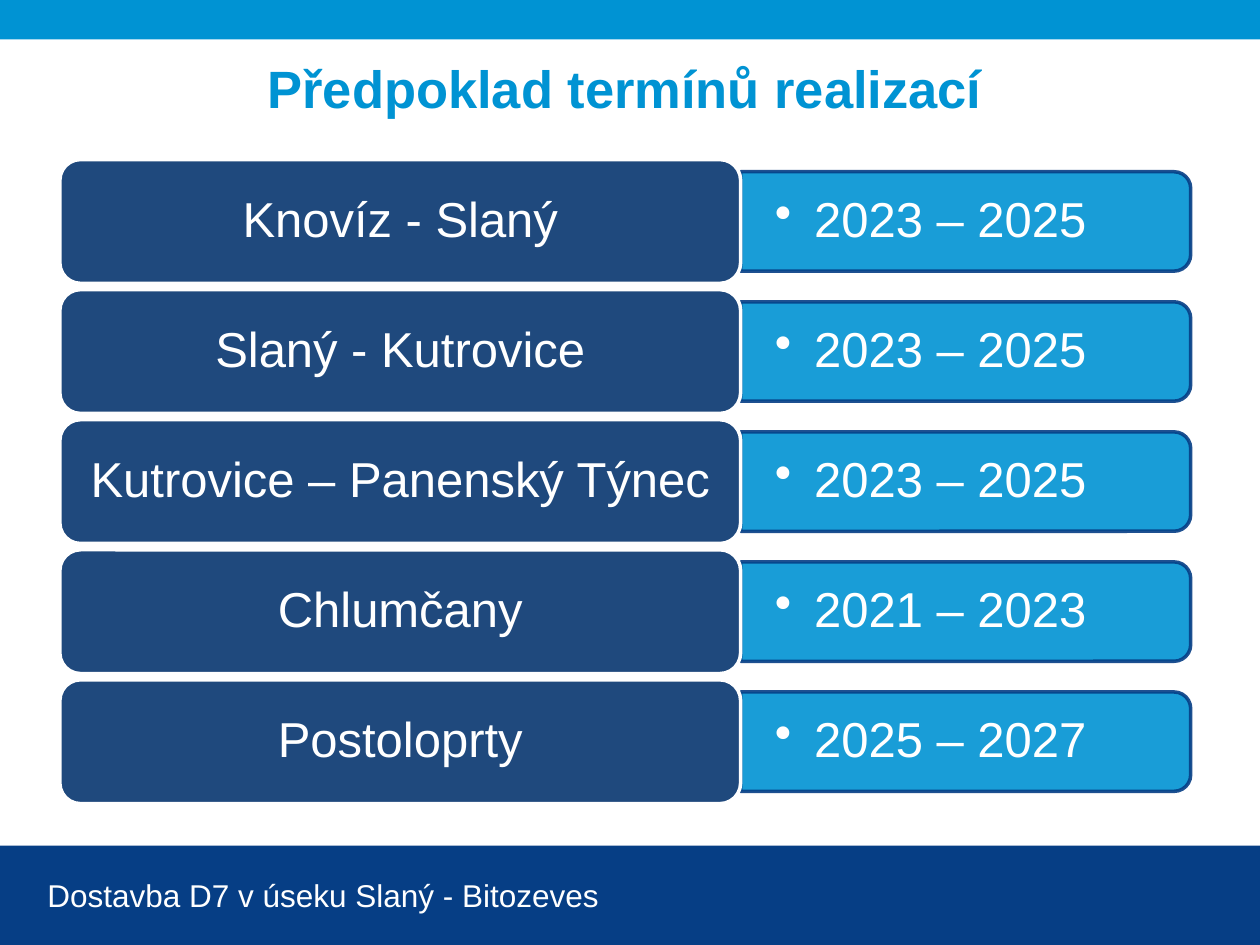
from dataclasses import dataclass

from lxml import etree
from pptx import Presentation
from pptx.dml.color import RGBColor
from pptx.enum.shapes import MSO_SHAPE
from pptx.enum.text import MSO_ANCHOR, PP_ALIGN
from pptx.oxml.ns import qn
from pptx.util import Pt

RECT = MSO_SHAPE.RECTANGLE
ROUNDED = MSO_SHAPE.ROUNDED_RECTANGLE
TOP_ROUNDED = MSO_SHAPE.ROUND_2_SAME_RECTANGLE
TOP, MIDDLE = MSO_ANCHOR.TOP, MSO_ANCHOR.MIDDLE
LEFT, CENTER = PP_ALIGN.LEFT, PP_ALIGN.CENTER


@dataclass(frozen=True)
class Theme:
    font: str = "Arial"
    sky: RGBColor = RGBColor(0x00, 0x93, 0xD3)
    navy: RGBColor = RGBColor(0x06, 0x3E, 0x85)
    steel: RGBColor = RGBColor(0x1F, 0x49, 0x7D)
    white: RGBColor = RGBColor(0xFF, 0xFF, 0xFF)
    title_size: int = 30
    row_size: int = 28
    footer_size: int = 18
    border: int = 2
    opacity: int = 90


THEME = Theme()
SLIDE_W, SLIDE_H = 720, 540
SECTIONS = [
    ("Knovíz - Slaný", "2023 – 2025"),
    ("Slaný - Kutrovice", "2023 – 2025"),
    ("Kutrovice – Panenský Týnec", "2023 – 2025"),
    ("Chlumčany", "2021 – 2023"),
    ("Postoloprty", "2025 – 2027"),
]


def add_block(slide, preset, box, fill, line=None):
    block = slide.shapes.add_shape(preset, *map(Pt, box))
    block.shadow.inherit = False
    block.fill.solid()
    block.fill.fore_color.rgb = fill
    if line is None:
        block.line.fill.background()
    else:
        block.line.color.rgb = line
        block.line.width = Pt(THEME.border)
    return block


def add_text_box(slide, box):
    return slide.shapes.add_textbox(*map(Pt, box))


def write(holder, text, size, color, align=LEFT, anchor=TOP, insets=(7.2, 3.6),
          bold=False, spacing=None, bullet_indent=None):
    """Write one paragraph; insets are (horizontal, vertical)."""
    frame = holder.text_frame
    frame.word_wrap = True
    frame.vertical_anchor = anchor
    frame.margin_left = frame.margin_right = Pt(insets[0])
    frame.margin_top = frame.margin_bottom = Pt(insets[1])
    paragraph = frame.paragraphs[0]
    paragraph.alignment = align
    if spacing:
        paragraph.line_spacing = spacing
    if bullet_indent:
        props = paragraph._p.get_or_add_pPr()
        props.set("marL", str(Pt(bullet_indent)))
        props.set("indent", str(-Pt(bullet_indent)))
        etree.SubElement(props, qn("a:buChar")).set("char", "•")
    run = paragraph.add_run()
    run.text = text
    run.font.name = THEME.font
    run.font.size = Pt(size)
    run.font.bold = bold
    run.font.color.rgb = color


def make_translucent(block):
    """Apply the theme opacity to the block's fill and line."""
    for color in block._element.spPr.iter(qn("a:srgbClr")):
        etree.SubElement(color, qn("a:alpha")).set("val", str(THEME.opacity * 1000))


def add_header(slide, box):
    left, top, width, height = box
    add_block(slide, RECT, (left, top, width, 22.5), THEME.sky)
    write(add_text_box(slide, (left + 46.8, top + 26, width - 99.4, height - 26)),
          "Předpoklad termínů realizací", THEME.title_size, THEME.sky,
          align=CENTER, insets=(7.2, 6), bold=True)


def add_footer(slide, box):
    left, top, _, _ = box
    add_block(slide, RECT, box, THEME.navy)
    write(add_text_box(slide, (left + 20, top + 14, 461.5, 29)),
          "Dostavba D7 v úseku Slaný - Bitozeves", THEME.footer_size, THEME.white)


def add_years(slide, box, years):
    """Bar with its right-hand corners rounded, made by a quarter turn."""
    left, top, width, height = box
    shift = (width - height) / 2
    bar = add_block(slide, TOP_ROUNDED, (left + shift, top - shift, height, width),
                    THEME.sky, THEME.navy)
    bar.rotation = 90
    make_translucent(bar)
    write(add_text_box(slide, box), years, THEME.row_size, THEME.white, anchor=MIDDLE,
          insets=(19.5, 3.6), spacing=0.9, bullet_indent=22.5)


def add_section_row(slide, box, section, years):
    left, top, width, height = box
    label_w, bar_h = 389, 56.8
    add_years(slide, (left + label_w, top + (height - bar_h) / 2, width - label_w, bar_h),
              years)
    label = add_block(slide, ROUNDED, (left, top, label_w, height), THEME.steel, THEME.white)
    write(label, section, THEME.row_size, THEME.white, align=CENTER, anchor=MIDDLE,
          insets=(8.6, 4.3), spacing=0.9)


def add_schedule(slide, box):
    left, top, width, height = box
    gap = 3.6
    row_h = (height - gap * (len(SECTIONS) - 1)) / len(SECTIONS)
    for index, (section, years) in enumerate(SECTIONS):
        row_top = top + index * (row_h + gap)
        add_section_row(slide, (left, row_top, width, row_h), section, years)


def main():
    deck = Presentation()
    deck.slide_width, deck.slide_height = Pt(SLIDE_W), Pt(SLIDE_H)
    slide = deck.slides.add_slide(deck.slide_layouts[6])
    footer_top = 483.3
    add_header(slide, (0, 0, SLIDE_W, 66.5))
    add_footer(slide, (0, footer_top, SLIDE_W, SLIDE_H - footer_top))
    add_schedule(slide, (34.2, 91.2, 646.2, 368))
    deck.save("out.pptx")


if __name__ == "__main__":
    main()
